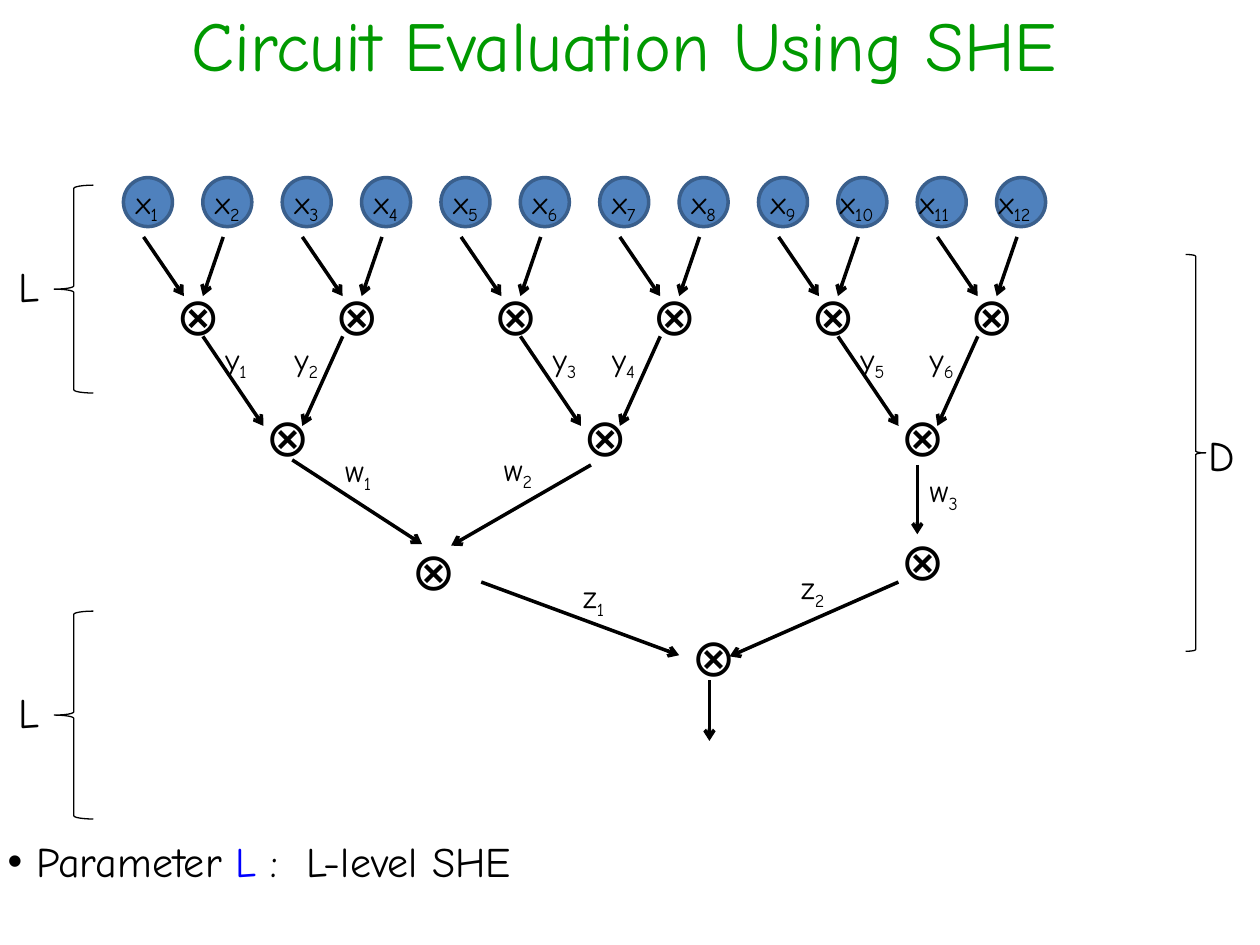
import pptx
import pptx.dml.color
import pptx.enum.shapes
import pptx.enum.text
import pptx.oxml
import pptx.oxml.ns
import pptx.util

Pt = pptx.util.Pt
RGBColor = pptx.dml.color.RGBColor
Shape = pptx.enum.shapes.MSO_SHAPE
Align = pptx.enum.text.PP_ALIGN
Anchor = pptx.enum.text.MSO_ANCHOR

BLACK = RGBColor(0x00, 0x00, 0x00)
GREEN = RGBColor(0x00, 0x99, 0x00)
BLUE = RGBColor(0x00, 0x00, 0xFF)
NODE_FILL = RGBColor(0x4F, 0x81, 0xBD)
NODE_LINE = RGBColor(0x3A, 0x5F, 0x8C)

LEFT = 70.56          # left edge of the first input
STEP = 45.36          # distance between neighbouring inputs
INPUTS = 12


def drawing_element(tag, attributes=""):
    return pptx.oxml.parse_xml(
        f"<a:{tag} {pptx.oxml.ns.nsdecls('a')} {attributes}/>")


class CircuitSlide:
    font = "Comic Neue"

    def __init__(self, deck):
        self.page = deck.slides.add_slide(deck.slide_layouts[1])

    def place(self, box, left, top, width, height):
        box.left, box.top = Pt(left), Pt(top)
        box.width, box.height = Pt(width), Pt(height)

    def span(self, para, text, size, color=BLACK, subscript=False):
        run = para.add_run()
        run.text = text
        run.font.name = self.font
        run.font.size = Pt(size)
        run.font.color.rgb = color
        if subscript:
            run.font._element.set("baseline", "-25000")

    def title(self, text):
        box = self.page.shapes.title
        self.place(box, 5.76, -2.16, 702, 54)
        box.text_frame.vertical_anchor = Anchor.MIDDLE
        para = box.text_frame.paragraphs[0]
        para.alignment = Align.CENTER
        self.span(para, text, 40, GREEN)

    def bullet(self, parts):
        box = self.page.placeholders[1]
        self.place(box, -2.88, 473.76, 334.8, 36)
        box.text_frame.auto_size = pptx.enum.text.MSO_AUTO_SIZE.NONE
        para = box.text_frame.paragraphs[0]
        properties = para._p.get_or_add_pPr()
        properties.set("marL", str(Pt(16.5)))
        properties.set("indent", str(-Pt(16.5)))
        properties.append(drawing_element("buChar", 'char="•"'))
        para.space_before = Pt(0)
        for text, color in parts:
            self.span(para, text, 24, color)

    def text(self, left, top, width, height, text, size, index=""):
        box = self.page.shapes.add_textbox(Pt(left), Pt(top), Pt(width), Pt(height))
        box.text_frame.word_wrap = True
        para = box.text_frame.paragraphs[0]
        self.span(para, text, size)
        if index:
            self.span(para, index, size, subscript=True)

    def variable(self, left, top, name, index):
        self.text(left, top, 62.64, 28.8, name, 18, str(index))

    def gate(self, left, top):
        self.text(left, top, 33.84, 43.92, "⊗", 30)

    def letter(self, left, top, text):
        self.text(left, top, 27.36, 36, text, 24)

    def node(self, left, top):
        circle = self.page.shapes.add_shape(
            Shape.OVAL, Pt(left), Pt(top), Pt(28), Pt(28))
        circle.shadow.inherit = False
        circle.fill.solid()
        circle.fill.fore_color.rgb = NODE_FILL
        circle.line.color.rgb = NODE_LINE
        circle.line.width = Pt(2)

    def brace(self, left, top, width, height, rotation=0):
        brace = self.page.shapes.add_shape(
            Shape.RIGHT_BRACE, Pt(left), Pt(top), Pt(width), Pt(height))
        brace.rotation = rotation
        brace.shadow.inherit = False
        brace.fill.background()
        brace.line.color.rgb = BLACK
        brace.line.width = Pt(0.75)

    def arrow(self, x1, y1, x2, y2):
        arrow = self.page.shapes.add_connector(
            pptx.enum.shapes.MSO_CONNECTOR.STRAIGHT, Pt(x1), Pt(y1), Pt(x2), Pt(y2))
        arrow.line.color.rgb = BLACK
        arrow.line.width = Pt(2)
        arrow.line._get_or_add_ln().append(drawing_element("tailEnd", 'type="arrow"'))
        arrow._element.spPr.append(drawing_element("effectLst"))


def draw_inputs(slide):
    for number in range(1, INPUTS + 1):
        left = LEFT + (number - 1) * STEP
        slide.node(left, 101.5)
        wide_index_shift = 5.76 if number >= 10 else 0
        slide.variable(left - wide_index_shift, 100.8, "x", number)


def draw_upper_levels(slide):
    for pair in range(INPUTS // 2):
        left = LEFT + pair * 2 * STEP
        slide.gate(left + 23, 158.4)
        slide.arrow(left + 11.5, 135.4, left + 34.5, 169.2)
        slide.arrow(left + 57, 135.4, left + 45.4, 169.2)
    for group in range(INPUTS // 4):
        left = LEFT + group * 4 * STEP
        slide.gate(left + 74.2, 227.5)
        slide.arrow(left + 45.4, 192.2, left + 80, 243.4)
        slide.arrow(left + 125.3, 192.2, left + 102.2, 243.4)
    for index, left in enumerate((121.7, 161.3, 308.9, 342.7, 484.6, 524.2), 1):
        slide.variable(left, 190.5, "y", index)


def draw_lower_levels(slide):
    for gate in ((228.2, 303.8), (507.6, 298.1), (388.1, 352.8)):
        slide.gate(*gate)
    for arrow in (
        (167, 262.8, 241.2, 311),
        (337.7, 265.7, 257.8, 311.8),
        (524.2, 265.7, 524.2, 305.3),
        (275, 332.6, 388.1, 374.4),
        (513.4, 332.6, 416.9, 375.1),
        (405.4, 388.8, 405.4, 423.4),
    ):
        slide.arrow(*arrow)
    for left, top, name, index in (
        (190.1, 254.2, "w", 1),
        (280.8, 253.4, "w", 2),
        (524.2, 265.7, "w", 3),
        (326.2, 326.2, "z", 1),
        (450.7, 321.1, "z", 2),
    ):
        slide.variable(left, top, name, index)


def draw_depth_marks(slide):
    slide.brace(677.5, 145.4, 11.5, 226.8)
    slide.letter(683.3, 241.9, "D")
    for top in (105.8, 349.2):
        slide.brace(31, top, 22.3, 118.8, rotation=180)
        slide.letter(3.6, top + 39.6, "L")


def main():
    deck = pptx.Presentation()
    deck.slide_width, deck.slide_height = Pt(720), Pt(540)
    slide = CircuitSlide(deck)
    slide.title("Circuit Evaluation Using SHE")
    draw_inputs(slide)
    draw_upper_levels(slide)
    draw_lower_levels(slide)
    draw_depth_marks(slide)
    slide.bullet([("Parameter ", BLACK), ("L", BLUE), (" :  L-level SHE", BLACK)])
    deck.save("out.pptx")


if __name__ == "__main__":
    main()
